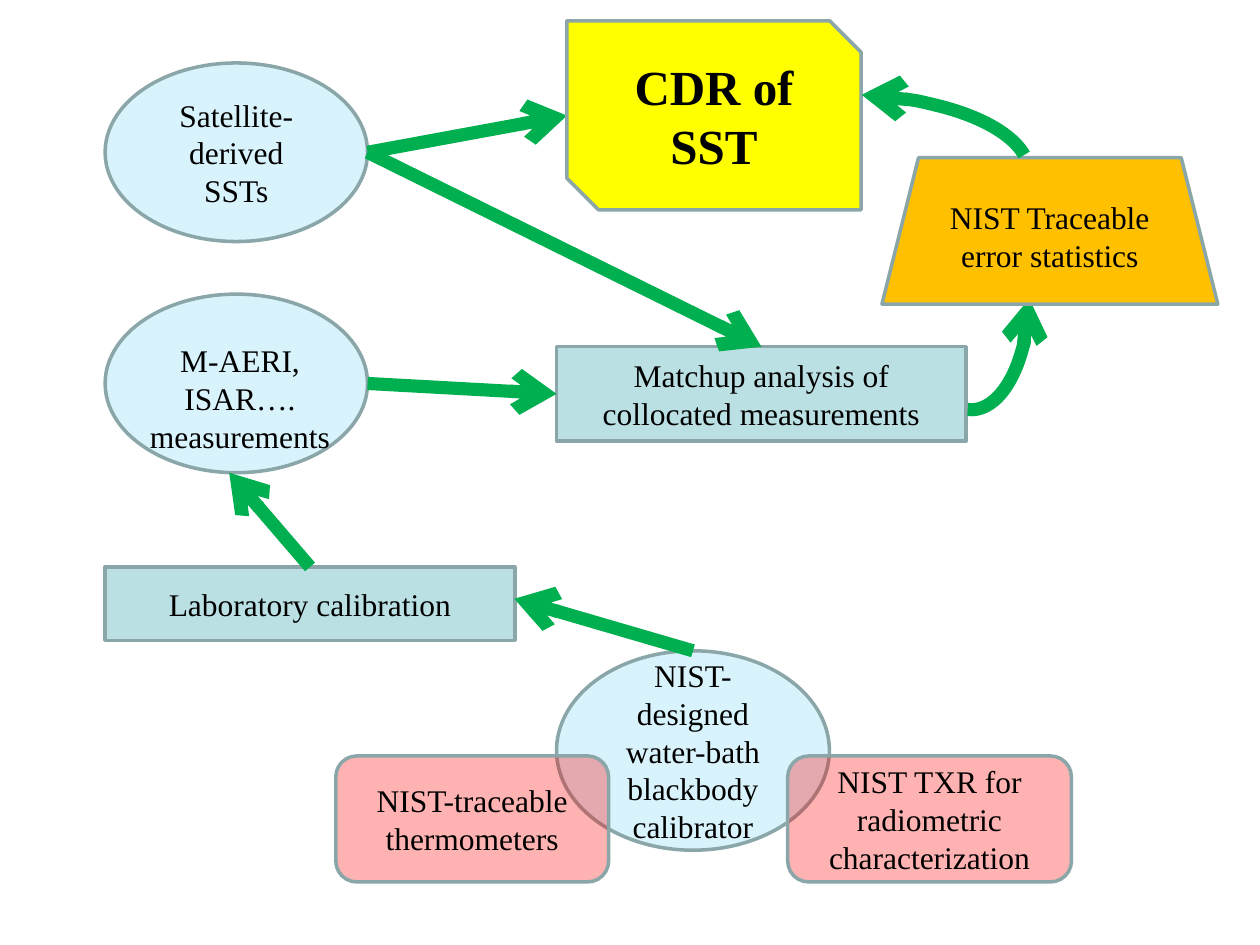
from dataclasses import dataclass

import pptx
import pptx.dml.color
import pptx.enum.shapes
import pptx.enum.text
import pptx.oxml
import pptx.oxml.ns
import pptx.util
from pptx.util import Cm

SHAPE = pptx.enum.shapes.MSO_SHAPE
ANCHOR = pptx.enum.text.MSO_ANCHOR
GREEN, OUTLINE = "00B050", "8AA6A8"
TEXT_FORMAT = {"name": "Times New Roman", "size": pptx.util.Pt(18), "bold": False}
TITLE_FORMAT = TEXT_FORMAT | {"size": pptx.util.Pt(28), "bold": True}


@dataclass(frozen=True)
class Style:
    """Preset outline with its fill; opacity is in percent."""
    preset: SHAPE
    fill: str
    opacity: int = 100


SOURCE = Style(SHAPE.OVAL, "00B0F0", 15)
STANDARD = Style(SHAPE.ROUNDED_RECTANGLE, "FF0000", 30)
PROCESS = Style(SHAPE.RECTANGLE, "BBE0E3")
RESULT = Style(SHAPE.SNIP_2_DIAG_RECTANGLE, "FFFF00")
STATISTICS = Style(SHAPE.TRAPEZOID, "FFC000")


@dataclass(frozen=True)
class Box:
    """Left, top, width and height in centimetres."""
    left: float
    top: float
    width: float
    height: float

    def lengths(self) -> list:
        return [Cm(value) for value in (self.left, self.top, self.width, self.height)]


@dataclass(frozen=True)
class Node:
    style: Style
    box: Box
    text: str = ""


@dataclass(frozen=True)
class Arrow:
    """Straight arrow between two points in centimetres."""
    start: tuple[float, float]
    end: tuple[float, float]


@dataclass(frozen=True)
class CurvedArrow:
    box: Box
    adjustments: tuple[float, float]
    rotation: int = 0


MEASUREMENTS = Node(SOURCE, Box(2.12, 5.93, 5.29, 3.6))
MEASUREMENTS_LABEL = Box(2.72, 6.76, 4.24, 2.57)

NODES = [
    Node(SOURCE, Box(11.22, 13.12, 5.5, 4.02),
         "NIST-designed water-bath blackbody calibrator"),
    Node(SOURCE, Box(2.12, 1.27, 5.29, 3.6), "Satellite-derived SSTs"),
    Node(STANDARD, Box(6.77, 15.24, 5.5, 2.54), "NIST-traceable thermometers"),
    Node(STANDARD, Box(15.88, 15.24, 5.72, 2.54),
         "NIST TXR for radiometric characterization"),
    Node(PROCESS, Box(2.12, 11.43, 8.26, 1.48), "Laboratory calibration"),
    Node(PROCESS, Box(11.22, 6.99, 8.26, 1.9),
         "Matchup analysis of collocated measurements"),
]
SATELLITE_EXIT = (7.41, 3.07)
ARROWS = [
    Arrow((13.97, 13.12), (10.37, 12.07)),
    Arrow((6.25, 11.43), (4.62, 9.53)),
    Arrow((7.41, 7.73), (11.22, 7.94)),
    Arrow(SATELLITE_EXIT, (15.35, 6.99)),
    Arrow(SATELLITE_EXIT, (11.43, 2.33)),
]
TO_STATISTICS = CurvedArrow(Box(18.42, 3.6, 2.33, 4.66), (2.721, 55.142))
TO_RESULT = CurvedArrow(Box(15.35, -0.32, 3.18, 7.62), (9.182, 50.617), 270)
RESULT_NODE = Node(RESULT, Box(11.43, 0.42, 5.93, 3.81), "CDR of SST")
STATISTICS_NODE = Node(STATISTICS, Box(17.78, 3.18, 6.77, 2.95),
                       "NIST Traceable error statistics")


def color(value: str) -> pptx.dml.color.RGBColor:
    return pptx.dml.color.RGBColor.from_string(value)


def add_child(parent, tag: str, **attributes: str) -> None:
    child = pptx.oxml.parse_xml(f"<{tag} {pptx.oxml.ns.nsdecls('a')}/>")
    for name, value in attributes.items():
        child.set(name, value)
    parent.append(child)


def set_line(shape, value: str, points: float) -> None:
    shape.line.color.rgb = color(value)
    shape.line.width = pptx.util.Pt(points)


def write_text(shape, text: str, anchor: ANCHOR, text_format: dict) -> None:
    frame = shape.text_frame
    frame.word_wrap = True
    frame.vertical_anchor = anchor
    paragraph = frame.paragraphs[0]
    paragraph.alignment = pptx.enum.text.PP_ALIGN.CENTER
    run = paragraph.add_run()
    run.text = text
    for name, value in text_format.items():
        setattr(run.font, name, value)
    run.font.color.rgb = color("000000")


def draw_node(shapes, node: Node, text_format: dict = TEXT_FORMAT) -> None:
    shape = shapes.add_shape(node.style.preset, *node.box.lengths())
    shape.shadow.inherit = False
    shape.fill.solid()
    shape.fill.fore_color.rgb = color(node.style.fill)
    if node.style.opacity < 100:
        fill_color = shape._element.spPr.find(
            f"{pptx.oxml.ns.qn('a:solidFill')}/{pptx.oxml.ns.qn('a:srgbClr')}")
        add_child(fill_color, "a:alpha", val=str(node.style.opacity * 1000))
    set_line(shape, OUTLINE, 2)
    if node.text:
        write_text(shape, node.text, ANCHOR.MIDDLE, text_format)


def draw_measurements(shapes) -> None:
    group = shapes.add_group_shape()
    draw_node(group.shapes, MEASUREMENTS)
    label = group.shapes.add_textbox(*MEASUREMENTS_LABEL.lengths())
    write_text(label, "M-AERI, ISAR…. measurements", ANCHOR.TOP, TEXT_FORMAT)


def draw_arrow(shapes, arrow: Arrow) -> None:
    points = [Cm(value) for value in arrow.start + arrow.end]
    connector = shapes.add_connector(pptx.enum.shapes.MSO_CONNECTOR.STRAIGHT, *points)
    set_line(connector, GREEN, 7.5)
    add_child(connector.line._get_or_add_ln(), "a:tailEnd", type="arrow")
    add_child(connector._element.spPr, "a:effectLst")


def draw_curved_arrow(shapes, arrow: CurvedArrow) -> None:
    arc = shapes.add_shape(SHAPE.ARC, *arrow.box.lengths())
    arc.shadow.inherit = False
    arc.fill.background()
    arc.rotation = arrow.rotation
    for index, value in enumerate(arrow.adjustments):
        arc.adjustments[index] = value
    set_line(arc, GREEN, 7.5)
    add_child(arc.line._get_or_add_ln(), "a:headEnd", type="arrow")


def main() -> None:
    presentation = pptx.Presentation()
    presentation.slide_width, presentation.slide_height = Cm(25.4), Cm(19.05)
    slide = presentation.slides.add_slide(presentation.slide_layouts[6])
    shapes = slide.shapes
    draw_measurements(shapes)
    for node in NODES:
        draw_node(shapes, node)
    for arrow in ARROWS:
        draw_arrow(shapes, arrow)
    draw_curved_arrow(shapes, TO_STATISTICS)
    draw_node(shapes, RESULT_NODE, TITLE_FORMAT)
    draw_node(shapes, STATISTICS_NODE)
    draw_curved_arrow(shapes, TO_RESULT)
    presentation.save("out.pptx")


if __name__ == "__main__":
    main()
